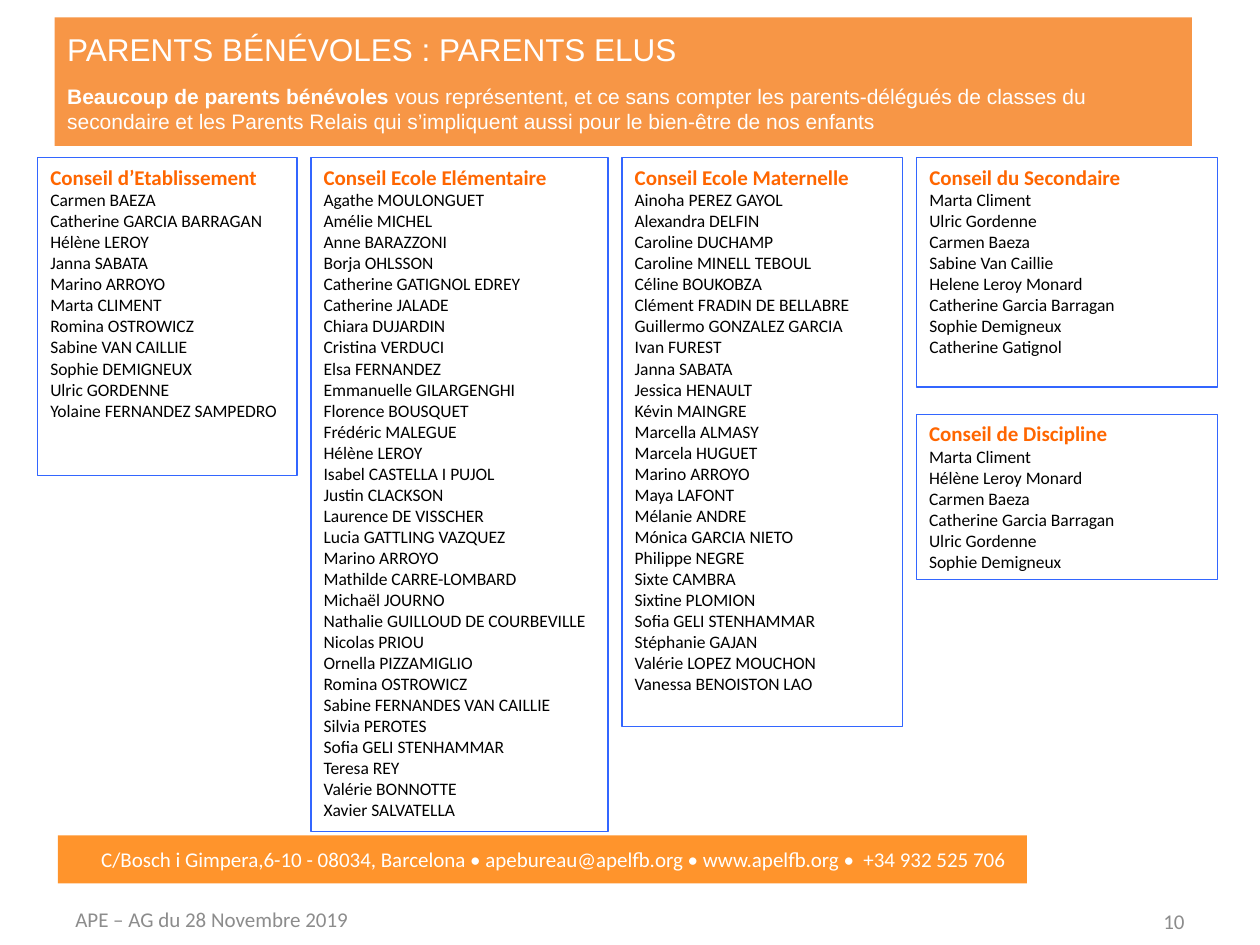
"""Build the slide listing the elected parent volunteers of each school council."""
from lxml import etree
from pptx import Presentation
from pptx import util as u
from pptx.dml.color import RGBColor
from pptx.enum import text
from pptx.oxml.ns import qn


def colour(value):
    return RGBColor.from_string(value)


def write(box, paragraphs, anchor=text.MSO_ANCHOR.TOP, align=text.PP_ALIGN.LEFT):
    frame = box.text_frame
    settings = {"word_wrap": True, "auto_size": text.MSO_AUTO_SIZE.NONE, "vertical_anchor": anchor}
    for name, value in settings.items():
        setattr(frame, name, value)
    for index, (spans, before) in enumerate(paragraphs):
        para = frame.add_paragraph() if index else frame.paragraphs[0]
        layout = {"alignment": align, "space_before": u.Pt(before), "space_after": u.Pt(0), "line_spacing": 1.0}
        for name, value in layout.items():
            setattr(para, name, value)
        properties = para._p.get_or_add_pPr()
        properties.set("marL", "0")
        properties.set("indent", "0")
        etree.SubElement(properties, qn("a:buNone"))
        for words, size, bold, face, hue in spans:
            span = para.add_run()
            span.text = words
            for name, value in {"size": u.Pt(size), "bold": bold, "name": face}.items():
                setattr(span.font, name, value)
            span.font.color.rgb = colour(hue)


councils = [
    ("Conseil d’Etablissement", 5.23, 6.4, """Carmen BAEZA
Catherine GARCIA BARRAGAN
Hélène LEROY
Janna SABATA
Marino ARROYO
Marta CLIMENT
Romina OSTROWICZ
Sabine VAN CAILLIE
Sophie DEMIGNEUX
Ulric GORDENNE
Yolaine FERNANDEZ SAMPEDRO"""),
    ("Conseil Ecole Elémentaire", 5.99, 13.59, """Agathe MOULONGUET
Amélie MICHEL
Anne BARAZZONI
Borja OHLSSON
Catherine GATIGNOL EDREY
Catherine JALADE
Chiara DUJARDIN
Cristina VERDUCI
Elsa FERNANDEZ
Emmanuelle GILARGENGHI
Florence BOUSQUET
Frédéric MALEGUE
Hélène LEROY
Isabel CASTELLA I PUJOL
Justin CLACKSON
Laurence DE VISSCHER
Lucia GATTLING VAZQUEZ
Marino ARROYO
Mathilde CARRE-LOMBARD
Michaël JOURNO
Nathalie GUILLOUD DE COURBEVILLE
Nicolas PRIOU
Ornella PIZZAMIGLIO
Romina OSTROWICZ
Sabine FERNANDES VAN CAILLIE
Silvia PEROTES
Sofia GELI STENHAMMAR
Teresa REY
Valérie BONNOTTE
Xavier SALVATELLA"""),
    ("Conseil Ecole Maternelle", 5.66, 11.46, """Ainoha PEREZ GAYOL
Alexandra DELFIN
Caroline DUCHAMP
Caroline MINELL TEBOUL
Céline BOUKOBZA
Clément FRADIN DE BELLABRE
Guillermo GONZALEZ GARCIA
Ivan FUREST
Janna SABATA
Jessica HENAULT
Kévin MAINGRE
Marcella ALMASY
Marcela HUGUET
Marino ARROYO
Maya LAFONT
Mélanie ANDRE
Mónica GARCIA NIETO
Philippe NEGRE
Sixte CAMBRA
Sixtine PLOMION
Sofia GELI STENHAMMAR
Stéphanie GAJAN
Valérie LOPEZ MOUCHON
Vanessa BENOISTON LAO"""),
    ("Conseil du Secondaire", 6.07, 4.62, """Marta Climent
Ulric Gordenne
Carmen Baeza
Sabine Van Caillie
Helene Leroy Monard
Catherine Garcia Barragan
Sophie Demigneux
Catherine Gatignol"""),
    ("Conseil de Discipline", 6.07, 3.33, """Marta Climent
Hélène Leroy Monard
Carmen Baeza
Catherine Garcia Barragan
Ulric Gordenne
Sophie Demigneux"""),
]

deck = Presentation()
deck.slide_width, deck.slide_height = u.Cm(25.4), u.Cm(19.05)
page = deck.slides.add_slide(deck.slide_layouts.get_by_name("Comparison"))
title, *lists = page.placeholders
lists.append(page.shapes.add_textbox(0, 0, 0, 0))

place = {"left": 1.1, "top": 0.35, "width": 22.93, "height": 2.59}
for name, value in place.items():
    setattr(title, name, u.Cm(value))
title.fill.solid()
title.fill.fore_color.rgb = colour("F79646")
write(title, [
    ([("PARENTS BÉNÉVOLES : PARENTS ELUS", 18, False, "Arial", "FFFFFF")], 0),
    ([("Beaucoup de parents bénévoles ", 12, True, "Arial", "FFFFFF"),
      ("vous représentent, et ce sans compter les parents-délégués de classes du secondaire "
       "et les Parents Relais qui s’impliquent aussi pour le bien-être de nos enfants",
       12, False, "Arial", "FFFFFF")], 9),
], text.MSO_ANCHOR.MIDDLE)

left, top, gap = 0.76, 3.18, 0.28
for box, (heading, width, height, members) in zip(lists, councils):
    place = {"left": left, "top": top, "width": width, "height": height}
    for name, value in place.items():
        setattr(box, name, u.Cm(value))
    box.line.color.rgb = colour("3366FF")
    box.line.width = u.Pt(0.75)
    names = [([(member, 10, False, "Calibri", "000000")], 0) for member in members.splitlines()]
    write(box, [([(heading, 12, True, "Calibri", "FF6600")], 0)] + names)
    if heading == "Conseil du Secondaire":
        top += height + 2 * gap
    else:
        left += width + gap

middle, start, end = text.MSO_ANCHOR.MIDDLE, text.PP_ALIGN.LEFT, text.PP_ALIGN.RIGHT
contact = "C/Bosch i Gimpera,6-10 - 08034, Barcelona • apebureau@apelfb.org • www.apelfb.org •  +34 932 525 706"
footers = [
    (contact, 1.17, 16.84, 19.53, 0.97, "FFFFFF", start),
    ("APE – AG du 28 Novembre 2019", 1.27, 18.01, 8.05, 1.02, "8C8C8C", start),
    ("10", 18.21, 18.06, 5.92, 1.02, "8C8C8C", end),
]
for words, left, top, width, height, hue, align in footers:
    box = page.shapes.add_textbox(u.Cm(left), u.Cm(top), u.Cm(width), u.Cm(height))
    if words == contact:
        box.fill.solid()
        box.fill.fore_color.rgb = colour("FF942C")
        box.text_frame.margin_left = u.Cm(0.87)
    write(box, [([(words, 12, False, "Calibri", hue)], 0)], middle, align)

deck.save("out.pptx")
